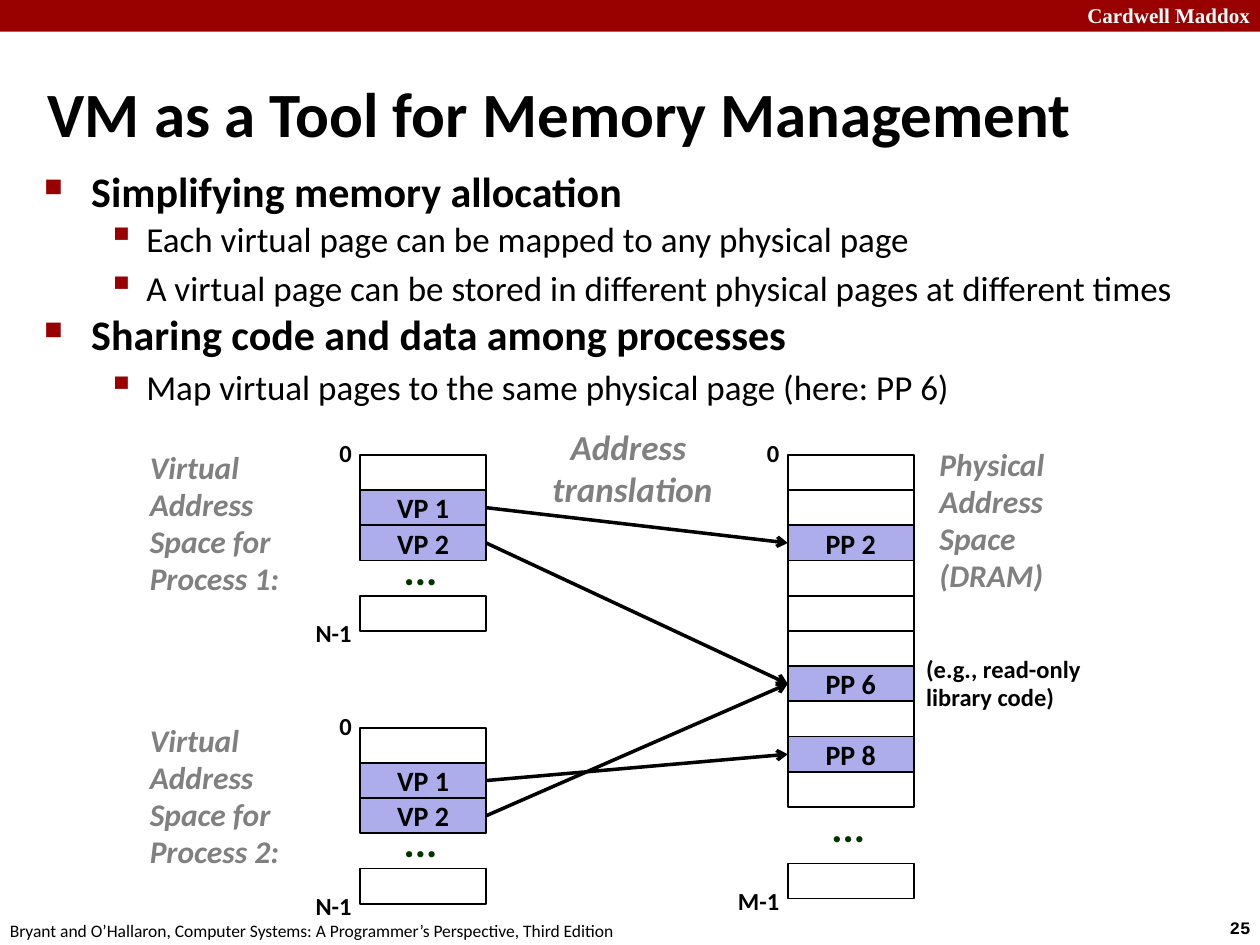
from lxml.etree import SubElement as Sub
from pptx import Presentation
from pptx.dml.color import RGBColor as RGB
from pptx.enum.shapes import MSO_CONNECTOR as Link, MSO_SHAPE as Kind
from pptx.enum.text import MSO_ANCHOR as Anchor, PP_ALIGN as Align
from pptx.oxml.ns import qn
from pptx.util import Cm, Pt

RED = RGB(0x99, 0x00, 0x00)
WHITE = RGB(0xFF, 0xFF, 0xFF)
BLACK = RGB(0x00, 0x00, 0x00)
GRAY = RGB(0x80, 0x80, 0x80)
LILAC = RGB(0xAD, 0xAD, 0xEB)
GREEN = RGB(0x00, 0x33, 0x00)

ROW, WIDE = 0.71, 2.54      # size of one memory page
TOP, STEP = 9.17, 5.5       # first page, distance between processes
VIRT, PHYS = 7.26, 15.88    # left edges of the address spaces


class Deck:
    font = "Calibri"

    def __init__(self):
        self.prs = Presentation()
        self.prs.slide_width, self.prs.slide_height = Cm(25.4), Cm(19.05)
        self.slide = self.prs.slides.add_slide(self.prs.slide_layouts[6])
        self.shapes = self.slide.shapes

    def style(self, par, size, color=BLACK, bold=True, slant=False, font=None):
        for run in par.runs:
            face = run.font
            face.name, face.size = font or self.font, Pt(size)
            face.bold, face.italic = bold, slant
            face.color.rgb = color

    def text(self, words, x, y, w, h, size, align=Align.LEFT, gap=None,
             wrap=True, mid=False, **look):
        box = self.shapes.add_textbox(Cm(x), Cm(y), Cm(w), Cm(h))
        frame = box.text_frame
        frame.text, frame.word_wrap = words, wrap
        if mid:
            frame.vertical_anchor = Anchor.MIDDLE
        for par in frame.paragraphs:
            par.alignment, par.line_spacing = align, gap
            self.style(par, size, **look)
        return box

    def rect(self, x, y, w, h, fill=None, line=None, words=""):
        box = self.shapes.add_shape(Kind.RECTANGLE, Cm(x), Cm(y), Cm(w), Cm(h))
        box.shadow.inherit = False
        if fill is None:
            box.fill.background()
        else:
            box.fill.solid()
            box.fill.fore_color.rgb = fill
        if line is None:
            box.line.fill.background()
        else:
            box.line.color.rgb, box.line.width = line, Pt(1)
        if words:
            frame = box.text_frame
            frame.text, frame.vertical_anchor = words, Anchor.MIDDLE
            frame.paragraphs[0].alignment = Align.CENTER
            self.style(frame.paragraphs[0], 16)
        return box

    def bullets(self, items, x, y, w, h):
        frame = self.shapes.add_textbox(Cm(x), Cm(y), Cm(w), Cm(h)).text_frame
        frame.word_wrap = True
        frame.text = "\n".join(words for _, words, _ in items)
        # By level: text size, left margin, hanging indent, sign, sign size
        looks = [(24, 0.95, 0.95, "■", 60), (20, 2.06, 0.79, "▪", 110)]
        for par, (level, _, gap) in zip(frame.paragraphs, items):
            size, left, hang, sign, part = looks[level]
            par.level, par.line_spacing = level, gap
            par.space_before = Pt(size * 0.2)
            self.style(par, size, bold=level == 0)
            props = par._p.get_or_add_pPr()
            props.set("marL", str(Cm(left)))
            props.set("indent", str(-Cm(hang)))
            Sub(Sub(props, qn("a:buClr")), qn("a:srgbClr"), val=str(RED))
            Sub(props, qn("a:buSzPct"), val=str(part * 1000))
            Sub(props, qn("a:buChar"), char=sign)

    def space(self, x, y, names, last, end):
        """Stack pages, then dots and the last page; return the named pages."""
        pages = {}
        for i, name in enumerate(names):
            box = self.rect(x, y + i * ROW, WIDE, ROW,
                            LILAC if name else None, BLACK, name)
            if name:
                pages[name] = box
        low = y + last * ROW
        self.rect(x, low, WIDE, ROW, line=BLACK)
        mid = (y + len(names) * ROW + low) / 2
        self.text("...", x + 0.63, mid - 0.7, 1.19, 1.14, 24, gap=0.88,
                  wrap=False, color=GREEN)
        for words, at in (("0", y - 0.43), (end, low + 0.36)):
            self.text(words, x - 1.92, at, 2, 0.84, 14, Align.RIGHT, 0.98)
        return pages

    def arrow(self, start, stop):
        line = self.shapes.add_connector(Link.STRAIGHT, 0, 0, 0, 0)
        line.begin_connect(start, 3)
        line.end_connect(stop, 1)
        line.line.color.rgb, line.line.width = BLACK, Pt(2)
        Sub(line.line._get_or_add_ln(), qn("a:tailEnd"), type="arrow")
        Sub(line._element.spPr, qn("a:effectLst"))


def main():
    deck = Deck()

    # Banner and footer
    deck.rect(0, 0, 25.4, 0.64, RED)
    deck.text("Cardwell Maddox", 20.45, -0.08, 5, 0.76, 12, Align.RIGHT,
              color=WHITE, font="Times New Roman")
    deck.text("25", 24.54, 18.36, 1.14, 0.69, 10, wrap=False,
              font="Courier New")
    deck.text("Bryant and O’Hallaron, Computer Systems: "
              "A Programmer’s Perspective, Third Edition",
              -0.05, 18.42, 12.9, 0.69, 10, wrap=False, bold=False)

    # Title and bullets
    deck.text("VM as a Tool for Memory Management", 0.71, 1.47, 23.93, 1.6,
              36, mid=True)
    deck.bullets([
        (0, "Simplifying memory allocation", 0.83),
        (1, "Each virtual page can be mapped to any physical page", 0.88),
        (1, "A virtual page can be stored in different physical pages "
            "at different times", 1.0),
        (0, "Sharing code and data among processes", 0.83),
        (1, "Map virtual pages to the same physical page (here: PP 6)", 1.0),
    ], 0.64, 3.38, 24.33, 5.28)

    # Address spaces
    phys = deck.space(PHYS, TOP, ["", "", "PP 2", "", "", "", "PP 6", "",
                                  "PP 8", ""], 11.6, "M-1")
    goals = [("PP 2", "PP 6"), ("PP 8", "PP 6")]
    for i, (one, two) in enumerate(goals):
        y = TOP + i * STEP
        virt = deck.space(VIRT, y, ["", "VP 1", "VP 2"], 4, "N-1")
        deck.text(f"Virtual Address Space for Process {i + 1}:",
                  2.77, y - 0.23, 3.81, 3.25, 18, gap=0.98,
                  color=GRAY, slant=True)
        deck.arrow(virt["VP 1"], phys[one])
        deck.arrow(virt["VP 2"], phys[two])

    # Captions
    deck.text("Physical\nAddress\nSpace (DRAM)", 18.69, 8.89, 2.97, 3.28, 18,
              gap=0.98, color=GRAY, slant=True)
    deck.text("(e.g., read-only\nlibrary code)", 18.42, 13.08, 4.04, 1.42, 14,
              gap=0.98)
    deck.text("Address \ntranslation", 10.87, 8.46, 3.76, 1.96, 20,
              Align.CENTER, wrap=False, color=GRAY, slant=True)

    deck.prs.save("out.pptx")


if __name__ == "__main__":
    main()
